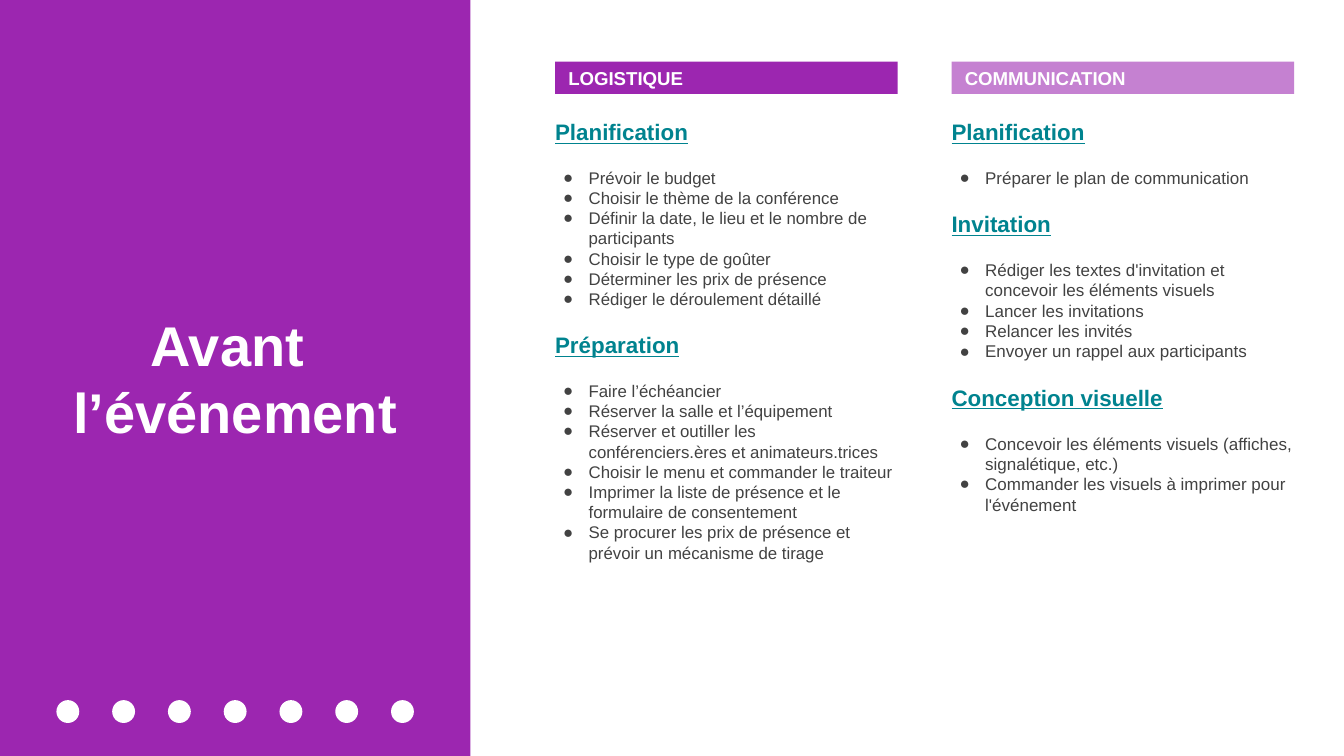
from lxml import etree
from pptx import Presentation
from pptx.dml.color import RGBColor
from pptx.enum.shapes import MSO_SHAPE
from pptx.enum.text import MSO_ANCHOR, MSO_AUTO_SIZE, PP_ALIGN
from pptx.oxml.ns import qn
from pptx.util import Inches, Pt

RECT, OVAL = MSO_SHAPE.RECTANGLE, MSO_SHAPE.OVAL
TOP, MIDDLE = MSO_ANCHOR.TOP, MSO_ANCHOR.MIDDLE
LEFT, CENTER = PP_ALIGN.LEFT, PP_ALIGN.CENTER
NO_FIT = MSO_AUTO_SIZE.NONE

PURPLE = RGBColor(0x9C, 0x26, 0xB0)
WHITE = RGBColor(0xFF, 0xFF, 0xFF)
TEAL = RGBColor(0x00, 0x83, 0x8F)
GREY = RGBColor(0x42, 0x42, 0x42)

FONT = "Arial"
W = 10
H = W * 9 / 16
PANEL = 0.35 * W
COL_W = 0.255 * W
BAR_H, BODY_TOP = 0.24, 0.42

LOGISTICS = [
    ("Planification", [
        "Prévoir le budget",
        "Choisir le thème de la conférence",
        "Définir la date, le lieu et le nombre de participants",
        "Choisir le type de goûter",
        "Déterminer les prix de présence",
        "Rédiger le déroulement détaillé",
    ]),
    ("Préparation", [
        "Faire l’échéancier",
        "Réserver la salle et l’équipement",
        "Réserver et outiller les conférenciers.ères et animateurs.trices",
        "Choisir le menu et commander le traiteur",
        "Imprimer la liste de présence et le formulaire de consentement",
        "Se procurer les prix de présence et prévoir un mécanisme de tirage",
    ]),
]
COMMUNICATION = [
    ("Planification", ["Préparer le plan de communication"]),
    ("Invitation", [
        "Rédiger les textes d'invitation et concevoir les éléments visuels",
        "Lancer les invitations",
        "Relancer les invités",
        "Envoyer un rappel aux participants",
    ]),
    ("Conception visuelle", [
        "Concevoir les éléments visuels (affiches, signalétique, etc.)",
        "Commander les visuels à imprimer pour l'événement",
    ]),
]


def place(sp, x, y, w, h):
    """Move and size a shape, in inches."""
    sp.left, sp.top, sp.width, sp.height = (Inches(v) for v in (x, y, w, h))


def frame(sp, inset, anchor):
    """Prepare the text frame of a shape and return it."""
    tf = sp.text_frame
    tf.word_wrap, tf.auto_size, tf.vertical_anchor = True, NO_FIT, anchor
    tf.margin_left = tf.margin_right = Inches(inset)
    tf.margin_top = tf.margin_bottom = Inches(inset)
    return tf


def write(tf, text, size, color, bold=True, underline=False, align=LEFT,
          before=0, bullet=False):
    """Add one formatted paragraph to a text frame."""
    p = tf.paragraphs[0] if not tf.text else tf.add_paragraph()
    p.alignment, p.line_spacing = align, 1.0
    p.space_before, p.space_after = Pt(before), Pt(0)
    pPr = p._p.get_or_add_pPr()
    pPr.set("marL", str(Inches(0.25) if bullet else 0))
    pPr.set("indent", str(Inches(-0.19) if bullet else 0))
    if bullet:
        clr = etree.SubElement(pPr, qn("a:buClr"))
        etree.SubElement(clr, qn("a:srgbClr"), val=str(color))
        etree.SubElement(pPr, qn("a:buFont"), typeface=FONT)
        etree.SubElement(pPr, qn("a:buChar"), char="●")
    else:
        etree.SubElement(pPr, qn("a:buNone"))
    r = p.add_run()
    r.text = text
    r.font.name, r.font.size, r.font.color.rgb = FONT, Pt(size), color
    r.font.bold, r.font.underline = bold, underline


def add_block(s, kind, box, color, alpha=None):
    """Add a plain filled shape without outline or shadow."""
    sp = s.shapes.add_shape(kind, *(Inches(v) for v in box))
    sp.shadow.inherit = False
    sp.line.fill.background()
    sp.fill.solid()
    sp.fill.fore_color.rgb = color
    if alpha:
        clr = sp._element.spPr.find(".//" + qn("a:srgbClr"))
        etree.SubElement(clr, qn("a:alpha"), val=str(alpha * 1000))
    return sp


def add_background(s, box):
    """Fill the slide purple and lay a white area behind everything else."""
    s.background.fill.solid()
    s.background.fill.fore_color.rgb = PURPLE
    sp = add_block(s, RECT, box, WHITE)
    s.shapes._spTree.insert(2, sp._element)


def add_title_panel(s, box, lines):
    """Place the title and the row of dots in the left panel."""
    x, y, w, h = box
    title = s.shapes.title
    place(title, x, y + 0.325 * h, w, 0.35 * h)
    tf = frame(title, 0.1, MIDDLE)
    for line in lines:
        write(tf, line, 30, WHITE, align=CENTER)
    dot, left, top, pitch = 0.17, x + 0.12 * w, 5.21, 0.415
    for i in range(7):
        add_block(s, OVAL, (left + i * pitch, y + top, dot, dot), WHITE)


def add_column(s, body, box, heading, sections, size, alpha=None):
    """Place a heading bar with its sections of bulleted tasks below."""
    x, y, w, h = box
    bar = add_block(s, RECT, (x, y, w, BAR_H), PURPLE, alpha)
    write(frame(bar, 0.1, MIDDLE), heading, 10, WHITE)
    place(body, x, y + BODY_TOP, w, h - BODY_TOP)
    tf = frame(body, 0, TOP)
    for n, (name, tasks) in enumerate(sections):
        write(tf, name, 12, TEAL, underline=True, before=12 if n else 0)
        for i, task in enumerate(tasks):
            write(tf, task, size, GREY, bold=False, bullet=True,
                  before=0 if i else 12)


def main():
    """Build and save the slide."""
    prs = Presentation()
    prs.slide_width, prs.slide_height = Inches(W), Inches(H)
    s = prs.slides.add_slide(prs.slide_layouts[3])
    left, right = s.placeholders[1], s.placeholders[2]
    add_background(s, (PANEL, 0, W - PANEL, H))
    add_title_panel(s, (0, 0, PANEL, H), ["Avant ", "l’événement"])
    add_column(s, left, (0.413 * W, 0.46, COL_W, 5), "LOGISTIQUE", LOGISTICS, 9)
    add_column(s, right, (0.708 * W, 0.46, COL_W, 4.3), "COMMUNICATION",
               COMMUNICATION, 9.1, alpha=58)
    prs.save("out.pptx")


if __name__ == "__main__":
    main()
